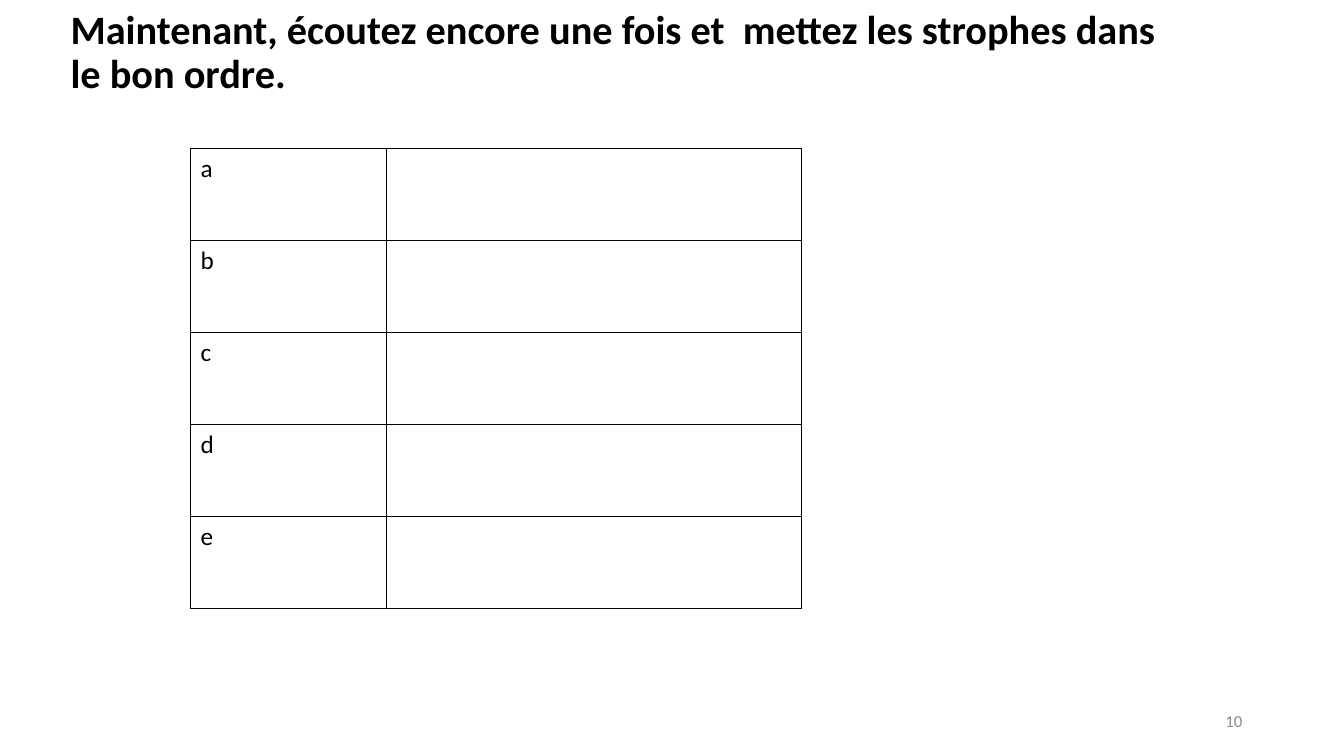
from lxml.etree import SubElement
from pptx import Presentation
from pptx.dml.color import RGBColor
from pptx.enum.text import MSO_ANCHOR, PP_ALIGN
from pptx.oxml.ns import qn
from pptx.util import Inches, Pt

WIDTH, HEIGHT = Inches(13.33), Inches(7.5)
COLORS = {"ink": "000000", "muted": "8C8C8C"}
FONT = "Calibri"
STROPHES = "abcde"
COLUMN_WIDTHS = (Inches(1.94), Inches(4.12))
ROW_HEIGHT = Inches(0.914)


def write(frame, text, size=18, color="ink", bold=False,
          align=PP_ALIGN.LEFT, anchor=MSO_ANCHOR.TOP, spacing=1.0):
    frame.word_wrap = True
    frame.vertical_anchor = anchor
    para = frame.paragraphs[0]
    para.alignment = align
    para.line_spacing = spacing
    span = para.add_run()
    span.text = text
    span.font.name = FONT
    span.font.size = Pt(size)
    span.font.bold = bold
    span.font.color.rgb = RGBColor.from_string(COLORS[color])


def add_title(page, text):
    title = page.shapes.title
    title.left, title.top = int(WIDTH * 0.045), Inches(0.1)
    title.width, title.height = Inches(10.98), Inches(1.19)
    title.text_frame.margin_top = 0
    write(title.text_frame, text, size=28.8, bold=True, spacing=0.9)


def outline_cell(cell):
    properties = cell._tc.get_or_add_tcPr()
    for position, side in enumerate(("lnL", "lnR", "lnT", "lnB")):
        line = SubElement(properties, qn(f"a:{side}"), w=str(Pt(1)))
        fill = SubElement(line, qn("a:solidFill"))
        SubElement(fill, qn("a:srgbClr"), val=COLORS["ink"])
        properties.insert(position, line)


def add_answer_table(page):
    """Add one lettered row per strophe, with an empty cell for the answer."""
    frame = page.shapes.add_table(
        len(STROPHES), len(COLUMN_WIDTHS), Inches(1.89), Inches(1.47),
        sum(COLUMN_WIDTHS), ROW_HEIGHT * len(STROPHES))
    table = frame.table
    table.first_row = table.horz_banding = False
    for column, width in zip(table.columns, COLUMN_WIDTHS):
        column.width = width
    for row, letter in zip(table.rows, STROPHES):
        row.height = ROW_HEIGHT
        for cell in row.cells:
            cell.fill.background()
            outline_cell(cell)
        write(row.cells[0].text_frame, letter)


def add_page_number(page, number):
    box = page.shapes.add_textbox(Inches(9.42), Inches(6.95),
                                  Inches(3), Inches(0.4))
    write(box.text_frame, number, size=12, color="muted",
          align=PP_ALIGN.RIGHT, anchor=MSO_ANCHOR.MIDDLE)


def main():
    deck = Presentation()
    deck.slide_width, deck.slide_height = WIDTH, HEIGHT
    page = deck.slides.add_slide(deck.slide_layouts[5])
    add_title(page, "Maintenant, écoutez encore une fois et  mettez "
                    "les strophes dans le bon ordre.")
    add_answer_table(page)
    add_page_number(page, "10")
    deck.save("out.pptx")


if __name__ == "__main__":
    main()
